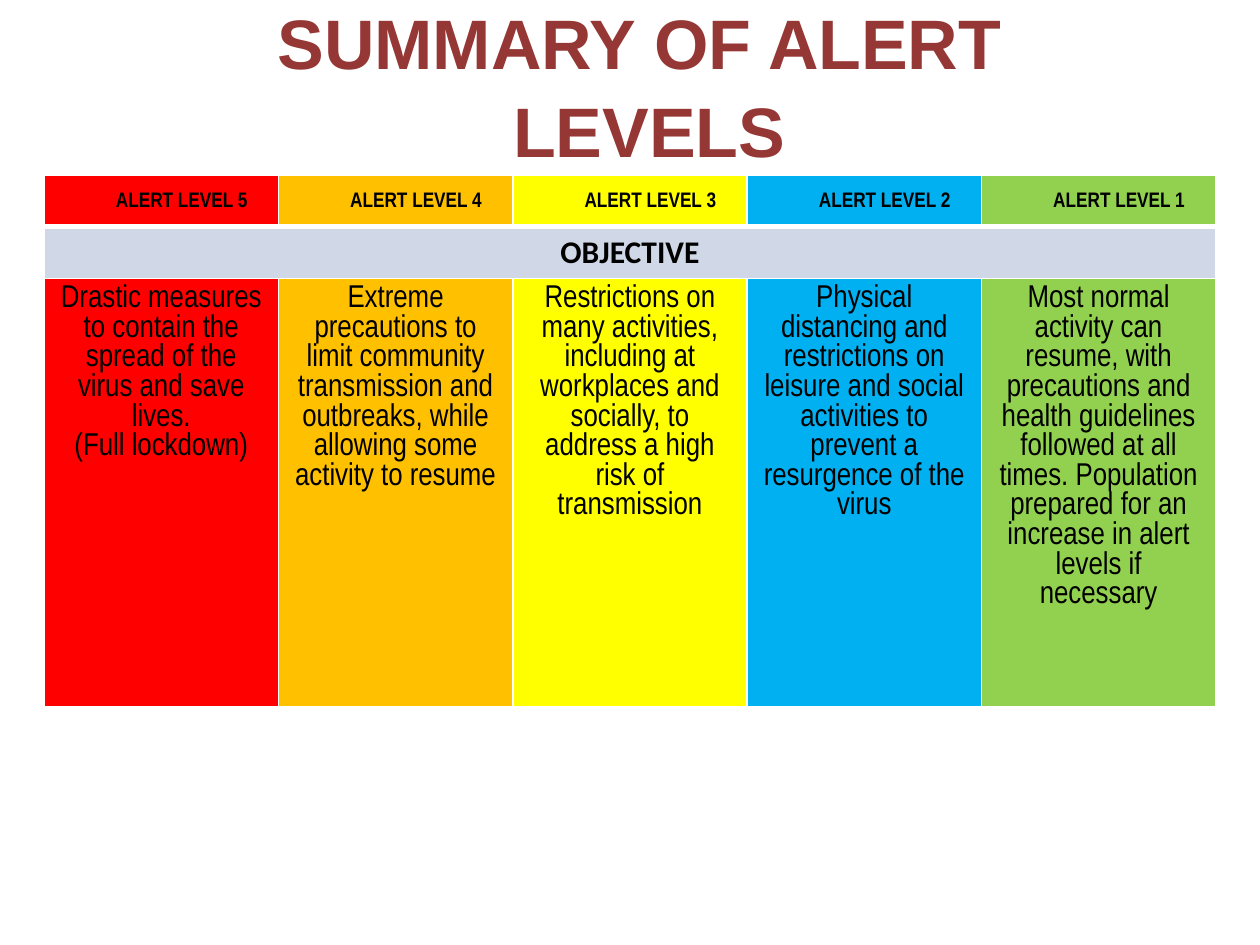
from lxml.etree import SubElement
from pptx import Presentation
from pptx.dml.color import RGBColor
from pptx.enum.text import MSO_ANCHOR as Anchor, PP_ALIGN as Align
from pptx.oxml.ns import qn
from pptx.util import Inches, Pt

COLORS = {
    "title": "953735", "text": "000000", "border": "FFFFFF", "band": "D0D8E8",
    "red": "FF0000", "orange": "FFC000", "yellow": "FFFF00",
    "blue": "00B0F0", "green": "92D050",
}
LEVELS = [
    ("ALERT LEVEL 5", "red", [
        "Drastic measures to contain the spread of the virus and save lives.",
        "(Full lockdown)"]),
    ("ALERT LEVEL 4", "orange", [
        "Extreme precautions to limit community transmission and outbreaks, "
        "while allowing some activity to resume"]),
    ("ALERT LEVEL 3", "yellow", [
        "Restrictions on many activities, including at workplaces and socially, "
        "to address a high risk of transmission"]),
    ("ALERT LEVEL 2", "blue", [
        "Physical distancing and restrictions on leisure and social activities "
        "to prevent a resurgence of the virus"]),
    ("ALERT LEVEL 1", "green", [
        "Most normal activity can resume, with precautions and health guidelines "
        "followed at all times. Population prepared for an increase in alert "
        "levels if necessary"]),
]


class Deck:
    """Holds the style and the current slide, and draws each kind of element."""

    def __init__(self, prs):
        self.s = prs.slides.add_slide(prs.slide_layouts[6])

    def run(self, p, text, size, font, color="text", bold=False):
        r = p.add_run()
        r.text = text
        r.font.size, r.font.name, r.font.bold = Pt(size), font, bold
        r.font.color.rgb = RGBColor.from_string(COLORS[color])

    def title(self, lines, left, top, width, height):
        sp = self.s.shapes.add_textbox(
            Inches(left), Inches(top), Inches(width), Inches(height))
        tf = sp.text_frame
        tf.word_wrap, tf.vertical_anchor = True, Anchor.MIDDLE
        p = tf.paragraphs[0]
        p.alignment, p.line_spacing = Align.CENTER, 1.05
        for i, line in enumerate(lines):
            if i:
                p.add_line_break()
            self.run(p, line, 40, "Arial", "title", True)

    def table(self, left, top, col_width, row_heights, cols):
        tbl = self.s.shapes.add_table(
            len(row_heights), cols, Inches(left), Inches(top),
            Inches(col_width * cols), Inches(sum(row_heights))).table
        for col in tbl.columns:
            col.width = Inches(col_width)
        for row, height in zip(tbl.rows, row_heights):
            row.height = Inches(height)
        return tbl

    def cell(self, cell, fill, top=1, bottom=1):
        cell.fill.solid()
        cell.fill.fore_color.rgb = RGBColor.from_string(COLORS[fill])
        tc_pr = cell._tc.get_or_add_tcPr()
        sides = (("a:lnL", 1), ("a:lnR", 1), ("a:lnT", top), ("a:lnB", bottom))
        for i, (tag, width) in enumerate(sides):
            ln = SubElement(tc_pr, qn(tag), w=str(Pt(width)))
            line_fill = SubElement(ln, qn("a:solidFill"))
            SubElement(line_fill, qn("a:srgbClr"), val=COLORS["border"])
            tc_pr.insert(i, ln)

    def header(self, cell, text, fill):
        self.cell(cell, fill, bottom=3)
        cell.vertical_anchor = Anchor.MIDDLE
        cell.margin_left = cell.margin_right = Inches(0.07)
        cell.margin_top = cell.margin_bottom = 0
        p = cell.text_frame.paragraphs[0]
        p.line_spacing = 1.15
        p._p.get_or_add_pPr().set("marL", str(Inches(0.5)))
        self.run(p, text, 12, "Arial Narrow", bold=True)

    def body(self, cell, paragraphs, font="Arial Narrow", bold=False):
        tf = cell.text_frame
        for i, text in enumerate(paragraphs):
            p = tf.add_paragraph() if i else tf.paragraphs[0]
            p.alignment = Align.CENTER
            self.run(p, text, 18, font, bold=bold)


def main():
    prs = Presentation()
    prs.slide_width, prs.slide_height = Inches(10), Inches(7.5)
    deck = Deck(prs)
    deck.title(["SUMMARY OF ALERT", " LEVELS"], 0.43, 0.15, 9.29, 1.02)
    tbl = deck.table(0.35, 1.39, 1.86, [0.41, 0.41, 2.67], len(LEVELS))
    for i, (name, fill, objective) in enumerate(LEVELS):
        deck.header(tbl.cell(0, i), name, fill)
        deck.cell(tbl.cell(1, i), "band", top=3)
        deck.cell(tbl.cell(2, i), fill)
        deck.body(tbl.cell(2, i), objective)
    tbl.cell(1, 0).merge(tbl.cell(1, len(LEVELS) - 1))
    deck.body(tbl.cell(1, 0), ["OBJECTIVE"], "Calibri", True)
    prs.save("out.pptx")


if __name__ == "__main__":
    main()
